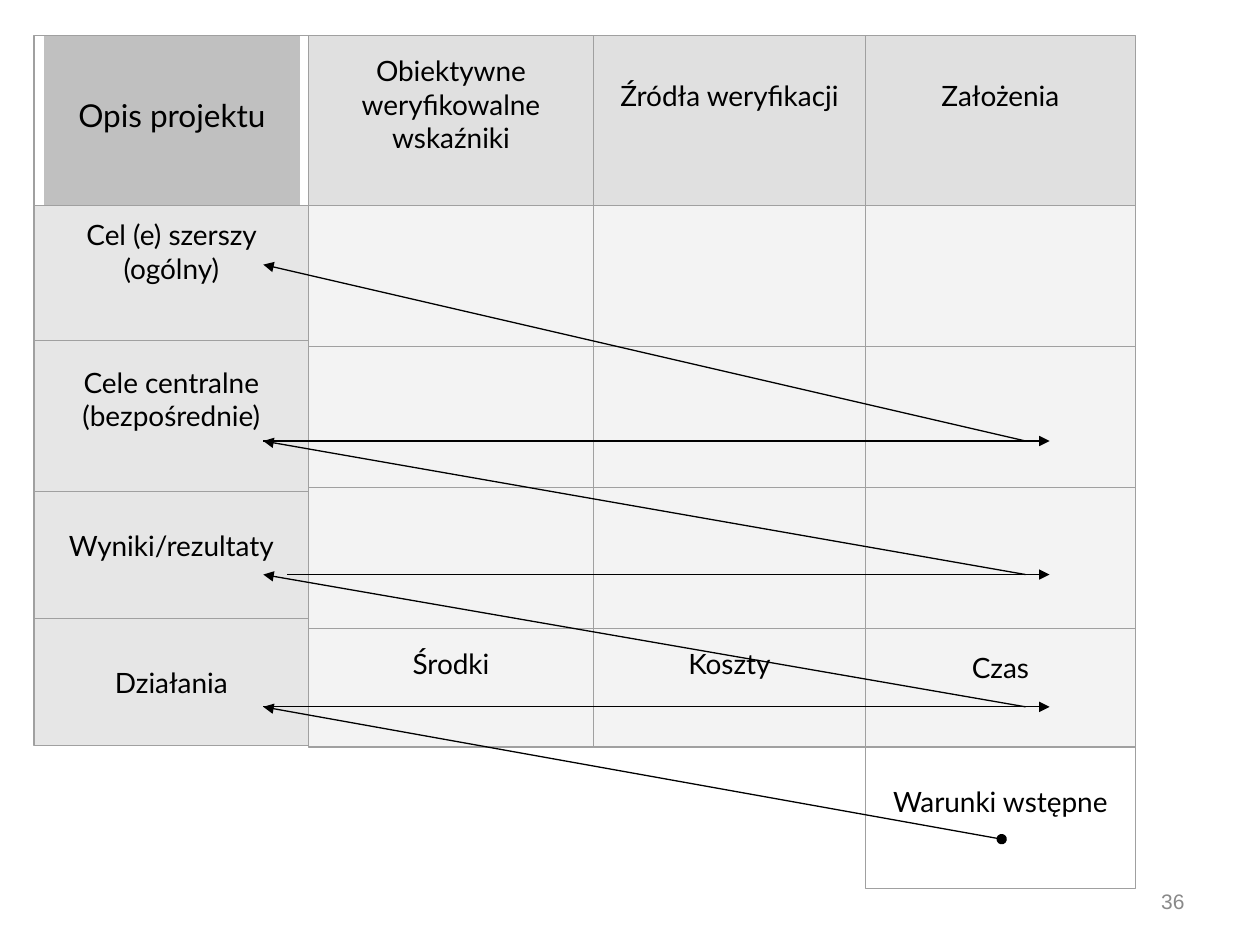
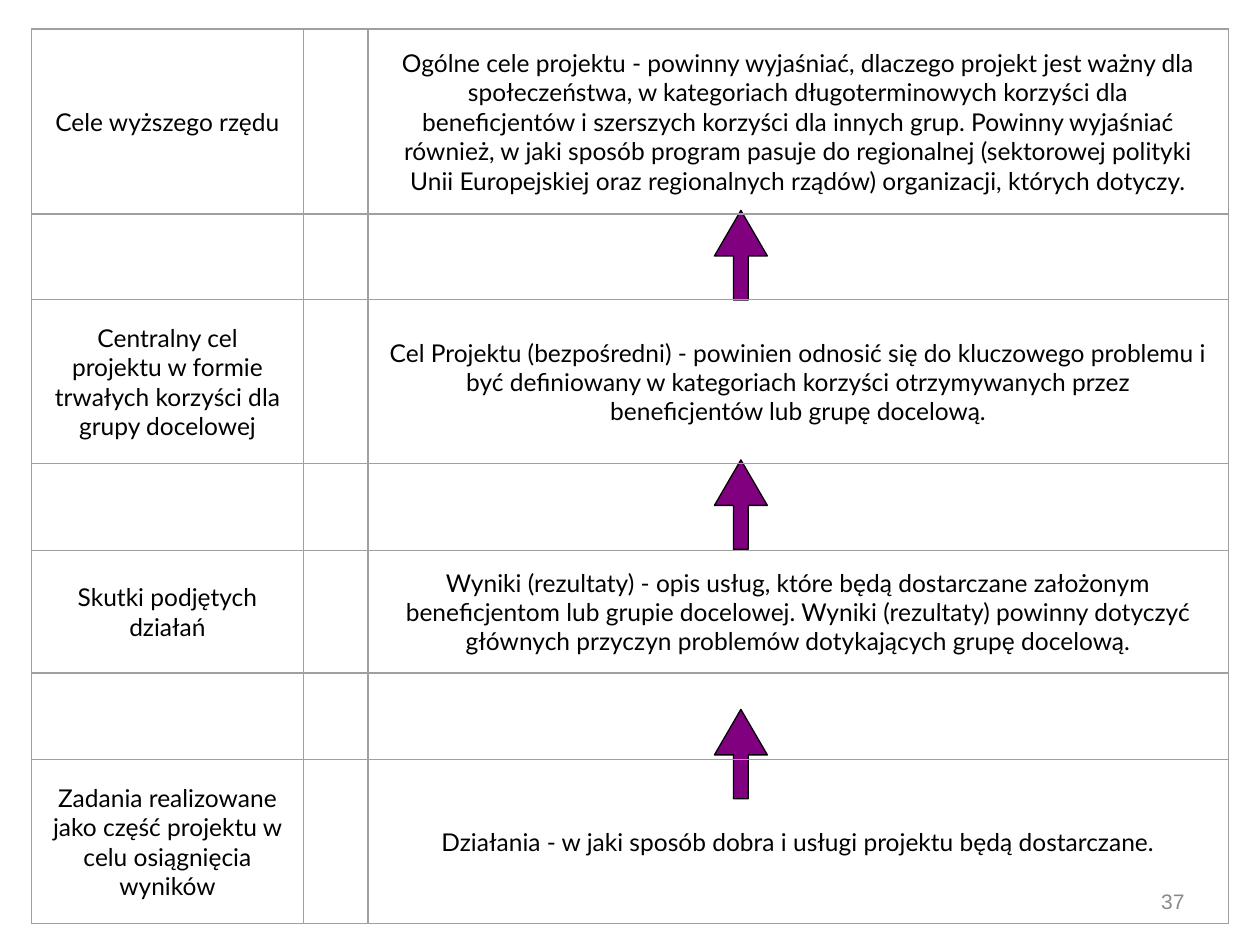
import itertools
from collections import namedtuple

import lxml.etree
import pptx
import pptx.dml.color
import pptx.enum.shapes
import pptx.enum.text
import pptx.oxml.ns
import pptx.util

Inches = pptx.util.Inches
RGB = pptx.dml.color.RGBColor
PRESET = pptx.enum.shapes.MSO_SHAPE
ALIGN = pptx.enum.text.PP_ALIGN
qn = pptx.oxml.ns.qn

BLACK = RGB(0x00, 0x00, 0x00)
GRID_GREY = RGB(0xA0, 0xA0, 0xA0)
TITLE_GREY = RGB(0xC0, 0xC0, 0xC0)
HEADER_GREY = RGB(0xE0, 0xE0, 0xE0)
LABEL_GREY = RGB(0xE6, 0xE6, 0xE6)
BODY_GREY = RGB(0xF3, 0xF3, 0xF3)
NUMBER_GREY = RGB(0x89, 0x89, 0x89)
PURPLE = RGB(0x80, 0x00, 0x80)

BODY_FONT, NUMBER_FONT = "Lato", "Arial"
SLIDE_WIDTH, SLIDE_HEIGHT = 10, 7.5
HAIRLINE = 0

# Lengths in inches
Box = namedtuple("Box", "left top width height")
# Space kept free below the text of a cell, in inches
TALL_TAIL, SHORT_TAIL = 0.39, 0.26


def edges(start, sizes):
    """Positions of the grid lines that bound consecutive columns or rows."""
    return list(itertools.accumulate(sizes, initial=start))


def grid_cells(box, columns, rows):
    """Cell boxes of a grid, one list for each row."""
    lefts, tops = edges(box.left, columns), edges(box.top, rows)
    return [[Box(left, top, width, height) for left, width in zip(lefts, columns)]
            for top, height in zip(tops, rows)]


def inches(box):
    return [Inches(length) for length in box]


def write(shape, text, size, font=BODY_FONT, color=BLACK, align=ALIGN.CENTER,
          side=0.1, above=0.05, below=0.05):
    frame = shape.text_frame
    frame.word_wrap = True
    frame.vertical_anchor = pptx.enum.text.MSO_ANCHOR.MIDDLE
    frame.margin_left = frame.margin_right = Inches(side)
    frame.margin_top, frame.margin_bottom = Inches(above), Inches(below)
    paragraph = frame.paragraphs[0]
    paragraph.alignment = align
    run = paragraph.add_run()
    run.text = text
    run.font.name, run.font.size = font, pptx.util.Pt(size)
    run.font.color.rgb = color


def draw(slide, preset, box, fill=None, line=None, width=HAIRLINE):
    shape = slide.shapes.add_shape(preset, *inches(box))
    shape.shadow.inherit = False
    if fill is None:
        shape.fill.background()
    else:
        shape.fill.solid()
        shape.fill.fore_color.rgb = fill
    if line is None:
        shape.line.fill.background()
    else:
        shape.line.color.rgb = line
        shape.line.width = pptx.util.Pt(width)
    return shape


def cell(slide, box, fill=None):
    return draw(slide, PRESET.RECTANGLE, box, fill, GRID_GREY)


def link(slide, start, end, head=None):
    """Thin black arrow from start to end."""
    connector = slide.shapes.add_connector(
        pptx.enum.shapes.MSO_CONNECTOR.STRAIGHT, *map(Inches, start + end))
    connector.line.color.rgb = BLACK
    connector.line.width = pptx.util.Pt(0.75)
    outline = connector.line._get_or_add_ln()
    if head:
        lxml.etree.SubElement(outline, qn("a:headEnd"), type=head)
    lxml.etree.SubElement(outline, qn("a:tailEnd"), type="triangle")
    lxml.etree.SubElement(connector._element.spPr, qn("a:effectLst"))


def slide_number(slide, number):
    box = Box(7.17, 6.95, 2.33, 0.4)
    write(slide.shapes.add_textbox(*inches(box)), str(number), 12,
          NUMBER_FONT, NUMBER_GREY, ALIGN.RIGHT)


# Slide 36: logical framework matrix
MATRIX_COLUMNS = [2.18, 2.26, 2.16, 2.14]
MATRIX_ROWS = [1.35, 1.12, 1.12, 1.12, 0.94, 1.12]
MATRIX_TEXTS = {  # (row, column): text, space below
    (0, 1): ("Obiektywne weryfikowalne wskaźniki", SHORT_TAIL),
    (0, 2): ("Źródła weryfikacji", TALL_TAIL),
    (0, 3): ("Założenia", TALL_TAIL),
    (4, 1): ("Środki", TALL_TAIL),
    (4, 2): ("Koszty", TALL_TAIL),
    (4, 3): ("Czas", 0.32),
    (5, 3): ("Warunki wstępne", SHORT_TAIL),
}
LEVELS = [  # text, top below the matrix top, height, space below
    ("Cel (e) szerszy (ogólny)", 1.35, 1.12, TALL_TAIL),
    ("Cele centralne (bezpośrednie)", 2.42, 1.32, TALL_TAIL),
    ("Wyniki/rezultaty", 3.62, 1.12, SHORT_TAIL),
    ("Działania", 4.63, 1.01, 0),
]


def write_in_matrix(shape, text, tail, size=16):
    write(shape, text, size, side=0.15, above=0.03, below=0.03 + tail)


def matrix_cells(slide, box):
    cells = grid_cells(box, MATRIX_COLUMNS, MATRIX_ROWS)

    # Title corner: a grey block inside an outlined cell
    corner = cells[0][0]
    title = draw(slide, PRESET.RECTANGLE,
                 corner._replace(left=corner.left + 0.08, width=2.03), TITLE_GREY)
    write_in_matrix(title, "Opis projektu", 0.09, size=18)
    cell(slide, corner)

    # Level labels, each overlapping the one above
    for text, top, height, tail in LEVELS:
        label = Box(box.left, box.top + top, MATRIX_COLUMNS[0], height)
        write_in_matrix(cell(slide, label, LABEL_GREY), text, tail)

    # Header, body and the precondition cell under the last column
    row_fills = [HEADER_GREY] + [BODY_GREY] * 4 + [None]
    for row, fill in enumerate(row_fills):
        for column in range(3 if fill is None else 1, 4):
            field = cell(slide, cells[row][column], fill)
            if (row, column) in MATRIX_TEXTS:
                write_in_matrix(field, *MATRIX_TEXTS[row, column])


def matrix_links(slide, box):
    """Zigzag reading order, from the preconditions up to the wider goal."""
    label_x, diagonal_x, assumption_x = (box.left + x for x in (1.82, 7.87, 8.06))
    goal, purpose, results, activities, preconditions = (
        box.top + y for y in (1.82, 3.22, 4.28, 5.33, 6.38))

    link(slide, (box.left + 7.68, preconditions), (label_x, activities), head="oval")
    for upper, lower in itertools.pairwise((goal, purpose, results, activities)):
        link(slide, (diagonal_x, lower), (label_x, upper))
    for level, start in ((purpose, label_x), (results, label_x + 0.19),
                         (activities, label_x)):
        link(slide, (start, level), (assumption_x, level))


def matrix_slide(slide, box):
    matrix_cells(slide, box)
    matrix_links(slide, box)


# Slide 37: hierarchy of goals
GOAL_COLUMNS = [2.16, 0.51, 6.83]
GOAL_ROWS = [1.47, 0.68, 1.3, 0.69, 0.97, 0.69, 1.3]
GOALS = [
    ("Cele wyższego rzędu",
     "Ogólne cele projektu - powinny wyjaśniać, dlaczego projekt jest ważny dla "
     "społeczeństwa, w kategoriach długoterminowych korzyści dla beneficjentów i "
     "szerszych korzyści dla innych grup. Powinny wyjaśniać również, w jaki sposób "
     "program pasuje do regionalnej (sektorowej polityki Unii Europejskiej oraz "
     "regionalnych rządów) organizacji, których dotyczy."),
    ("Centralny cel projektu w formie trwałych korzyści dla grupy docelowej",
     "Cel Projektu (bezpośredni) - powinien odnosić się do kluczowego problemu i być "
     "definiowany w kategoriach korzyści otrzymywanych przez beneficjentów lub grupę "
     "docelową."),
    ("Skutki podjętych działań",
     "Wyniki (rezultaty) - opis usług, które będą dostarczane założonym beneficjentom "
     "lub grupie docelowej. Wyniki (rezultaty) powinny dotyczyć głównych przyczyn "
     "problemów dotykających grupę docelową."),
    ("Zadania realizowane jako część projektu w celu osiągnięcia wyników",
     "Działania - w jaki sposób dobra i usługi projektu będą dostarczane."),
]


def goals_slide(slide, box):
    # Arrows at equal steps, behind the grid
    for step in range(3):
        arrow = draw(slide, PRESET.UP_ARROW,
                     Box(box.left + 5.42, box.top + 1.44 + 1.98 * step, 0.42, 0.71),
                     PURPLE, BLACK, 0.75)
        arrow.adjustments[0], arrow.adjustments[1] = 0.28, 0.86

    # Goals fill every other row; the rows between hold the arrows
    for row, row_cells in enumerate(grid_cells(box, GOAL_COLUMNS, GOAL_ROWS)):
        label, _, description = [cell(slide, place) for place in row_cells]
        if row % 2 == 0:
            for field, text in zip((label, description), GOALS[row // 2]):
                write(field, text, 14, side=0.17)

    # Outer frame
    draw(slide, PRESET.RECTANGLE, box, line=GRID_GREY, width=0.62)


def main():
    deck = pptx.Presentation()
    deck.slide_width, deck.slide_height = Inches(SLIDE_WIDTH), Inches(SLIDE_HEIGHT)
    blank = deck.slide_layouts[6]
    pages = [
        (matrix_slide, Box(0.27, 0.28, sum(MATRIX_COLUMNS), sum(MATRIX_ROWS))),
        (goals_slide, Box(0.25, 0.23, sum(GOAL_COLUMNS), sum(GOAL_ROWS))),
    ]
    for number, (build, box) in enumerate(pages, start=36):
        slide = deck.slides.add_slide(blank)
        build(slide, box)
        slide_number(slide, number)
    deck.save("out.pptx")


if __name__ == "__main__":
    main()
